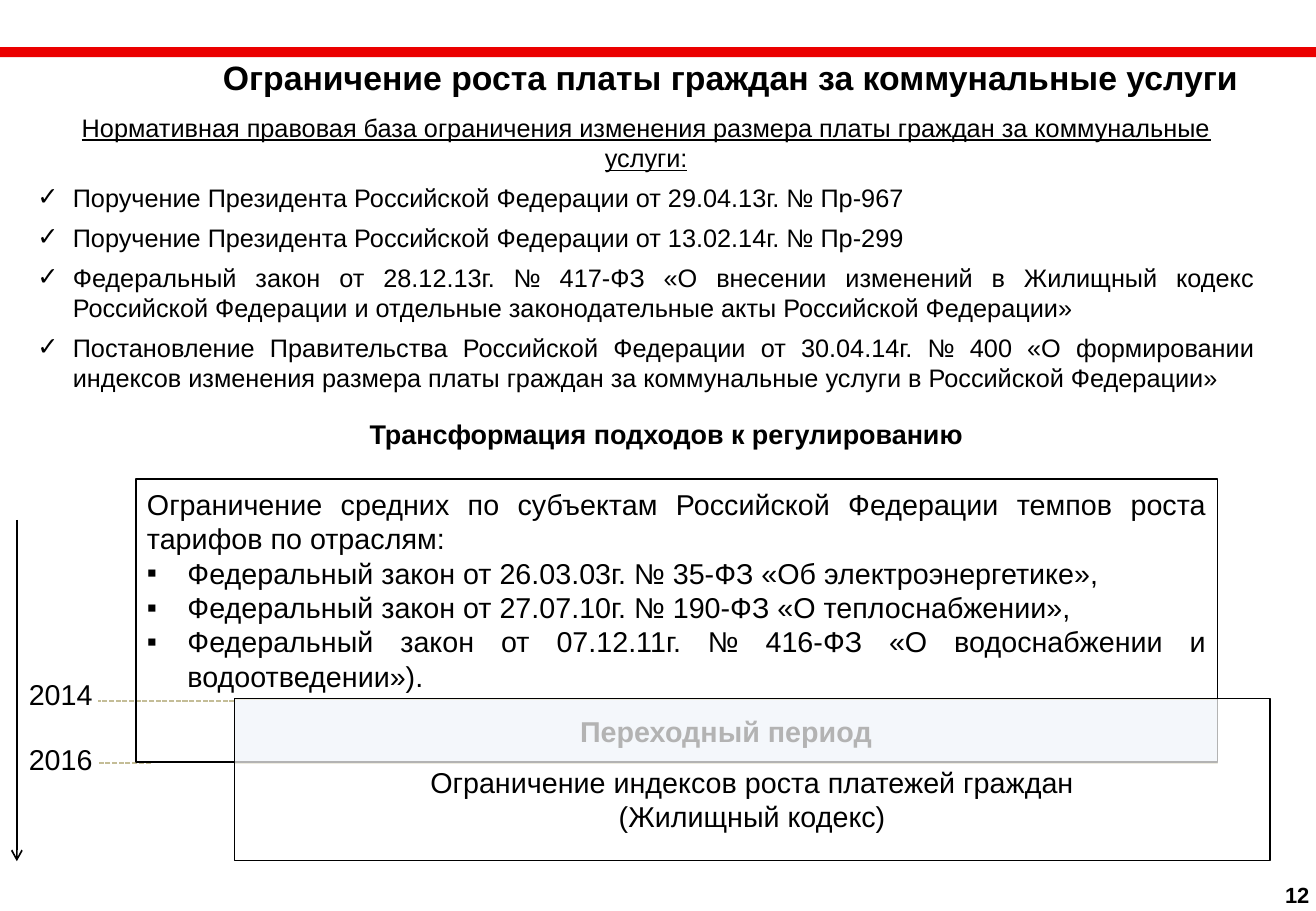
from dataclasses import dataclass, field
from typing import Optional

from lxml.etree import SubElement
from pptx import Presentation
from pptx.dml.color import RGBColor
from pptx.enum.dml import MSO_LINE
from pptx.enum.shapes import MSO_CONNECTOR, MSO_SHAPE
from pptx.enum.text import MSO_ANCHOR, MSO_AUTO_SIZE, PP_ALIGN
from pptx.oxml.ns import qn
from pptx.util import Pt

FONT = "Arial"
COLORS = {
    "text": "000000",
    "white": "FFFFFF",
    "red": "EB0000",
    "tan": "C4BD97",
    "pale_blue": "DCE6F2",
}
CENTER, JUSTIFY, LEFT = PP_ALIGN.CENTER, PP_ALIGN.JUSTIFY, PP_ALIGN.LEFT


@dataclass
class Para:
    text: str
    style: dict = field(default_factory=dict)


@dataclass
class Box:
    at: tuple[float, float, float, float]
    paras: list[Para] = field(default_factory=list)
    inset: tuple[float, float] = (6.6, 3.6)
    anchor: MSO_ANCHOR = MSO_ANCHOR.TOP
    wrap: bool = True
    fill: Optional[str] = None
    opacity: int = 100
    line: Optional[str] = None


@dataclass
class Line:
    start: tuple[float, float]
    end: tuple[float, float]
    color: str
    dashed: bool = False
    arrow: bool = False


def rgb(name: str) -> RGBColor:
    return RGBColor.from_string(COLORS[name])


def write_text(tf, text: str, *, size: float = 17, bold: bool = False,
               underline: bool = False, align: PP_ALIGN = LEFT,
               indent: float = 0, bullet: str = "", after: float = 0) -> None:
    p = tf.paragraphs[0]
    if p.runs:
        p = tf.add_paragraph()
    p.alignment = align
    p.space_after = Pt(after)
    if bullet:
        pPr = p._p.get_or_add_pPr()
        pPr.set("marL", str(Pt(indent)))
        pPr.set("indent", str(-Pt(indent)))
        SubElement(pPr, qn("a:buFont"), typeface=FONT)
        SubElement(pPr, qn("a:buChar"), char=bullet)
    r = p.add_run()
    r.text = text
    font = r.font
    font.name, font.size, font.bold, font.underline = FONT, Pt(size), bold, underline
    font.color.rgb = rgb("text")


def fill_frame(tf, box: Box) -> None:
    tf.auto_size = MSO_AUTO_SIZE.NONE
    tf.word_wrap = box.wrap
    tf.vertical_anchor = box.anchor
    tf.margin_left = tf.margin_right = Pt(box.inset[0])
    tf.margin_top = tf.margin_bottom = Pt(box.inset[1])
    for para in box.paras:
        write_text(tf, para.text, **para.style)


def add_title(s, box: Box) -> None:
    sp = s.shapes.title
    sp.left, sp.top, sp.width, sp.height = map(Pt, box.at)
    fill_frame(sp.text_frame, box)


def add_text_box(s, box: Box) -> None:
    fill_frame(s.shapes.add_textbox(*map(Pt, box.at)).text_frame, box)


def add_rect(s, box: Box) -> None:
    sp = s.shapes.add_shape(MSO_SHAPE.RECTANGLE, *map(Pt, box.at))
    sp.shadow.inherit = False
    if box.fill:
        sp.fill.solid()
        sp.fill.fore_color.rgb = rgb(box.fill)
        if box.opacity < 100:
            color = sp._element.spPr.find(qn("a:solidFill")).find(qn("a:srgbClr"))
            SubElement(color, qn("a:alpha"), val=str(box.opacity * 1000))
    else:
        sp.fill.background()
    if box.line:
        sp.line.color.rgb = rgb(box.line)
        sp.line.width = Pt(1)
    else:
        sp.line.fill.background()
    fill_frame(sp.text_frame, box)


def add_line(s, line: Line) -> None:
    cxn = s.shapes.add_connector(MSO_CONNECTOR.STRAIGHT, *map(Pt, line.start + line.end))
    cxn.line.color.rgb = rgb(line.color)
    cxn.line.width = Pt(1)
    if line.dashed:
        cxn.line.dash_style = MSO_LINE.SQUARE_DOT
    if line.arrow:
        SubElement(cxn.line._get_or_add_ln(), qn("a:tailEnd"), type="arrow")
    SubElement(cxn._element.spPr, qn("a:effectLst"))


CHECK = dict(size=15, align=JUSTIFY, indent=21, bullet="✓", after=5.6)
SQUARE = dict(align=JUSTIFY, indent=24, bullet="▪")
MIDDLE = dict(align=CENTER)

TITLE = Box((97.2, 30.2, 672.5, 31.7), [
    Para("Ограничение роста платы граждан за коммунальные услуги",
         dict(size=20, bold=True, align=CENTER)),
], inset=(7.2, 3.6))
RED_BAR = Box((0, 28, 780.5, 5.8), fill="red")
LEGAL_BASE = Box((10, 60.5, 746.6, 193), [
    Para("Нормативная правовая база ограничения изменения размера платы граждан за коммунальные услуги:",
         dict(size=15, underline=True, align=CENTER, after=5.6)),
    Para("Поручение Президента Российской Федерации от 29.04.13г. № Пр-967", CHECK),
    Para("Поручение Президента Российской Федерации от 13.02.14г. № Пр-299", CHECK),
    Para("Федеральный закон от 28.12.13г. № 417-ФЗ «О внесении изменений в Жилищный кодекс "
         "Российской Федерации и отдельные законодательные акты Российской Федерации»", CHECK),
    Para("Постановление Правительства Российской Федерации от 30.04.14г. № 400 «О формировании "
         "индексов изменения размера платы граждан за коммунальные услуги в Российской Федерации»", CHECK),
], inset=(12.2, 5.8))
SUBTITLE = Box((72.7, 244, 645, 26), [
    Para("Трансформация подходов к регулированию", dict(size=16, bold=True, align=CENTER)),
])
YEARS = [
    Box((10, top, 53.3, 28), [Para(year)], inset=(7.2, 3.6), wrap=False)
    for year, top in (("2014", 397.4), ("2016", 436.3))
]
PAGE_NUMBER = Box((754.6, 519, 29.5, 23), [
    Para("12", dict(size=13, bold=True, align=CENTER)),
], inset=(7.2, 3.6), wrap=False)
TRANSITION = Box((139, 414.7, 583.2, 37.5), [
    Para("Переходный период", dict(bold=True, align=CENTER)),
], anchor=MSO_ANCHOR.MIDDLE, fill="pale_blue", line="tan")
TARIFF_LIMITS = Box((80.6, 283.9, 641.6, 168), [
    Para("Ограничение средних по субъектам Российской Федерации темпов роста тарифов по отраслям:",
         dict(align=JUSTIFY)),
    Para("Федеральный закон от 26.03.03г. № 35-ФЗ «Об электроэнергетике»,", SQUARE),
    Para("Федеральный закон от 27.07.10г. № 190-ФЗ «О теплоснабжении»,", SQUARE),
    Para("Федеральный закон от 07.12.11г. № 416-ФЗ «О водоснабжении и водоотведении»).", SQUARE),
], inset=(6.6, 4.5), line="text")
PAYMENT_LIMITS = Box((139, 414, 614.2, 96), [
    Para("Ограничение индексов роста платежей граждан", MIDDLE),
    Para("(Жилищный кодекс)", MIDDLE),
], inset=(6.6, 16), anchor=MSO_ANCHOR.BOTTOM, fill="white", opacity=70, line="text")
LINES = [
    Line((89.3, 452.2), (58.3, 452.2), "tan", dashed=True),
    Line((139, 415.4), (58.3, 415.4), "tan", dashed=True),
    Line((10, 308.2), (10, 510.5), "text", arrow=True),
]


def main() -> None:
    prs = Presentation()
    prs.slide_width, prs.slide_height = Pt(780.48), Pt(540)
    s = prs.slides.add_slide(prs.slide_layouts[5])
    add_rect(s, RED_BAR)
    add_title(s, TITLE)
    for box in (LEGAL_BASE, SUBTITLE, *YEARS, PAGE_NUMBER):
        add_text_box(s, box)
    add_rect(s, TRANSITION)
    for line in LINES:
        add_line(s, line)
    for box in (TARIFF_LIMITS, PAYMENT_LIMITS):
        add_rect(s, box)
    prs.save("out.pptx")


if __name__ == "__main__":
    main()
